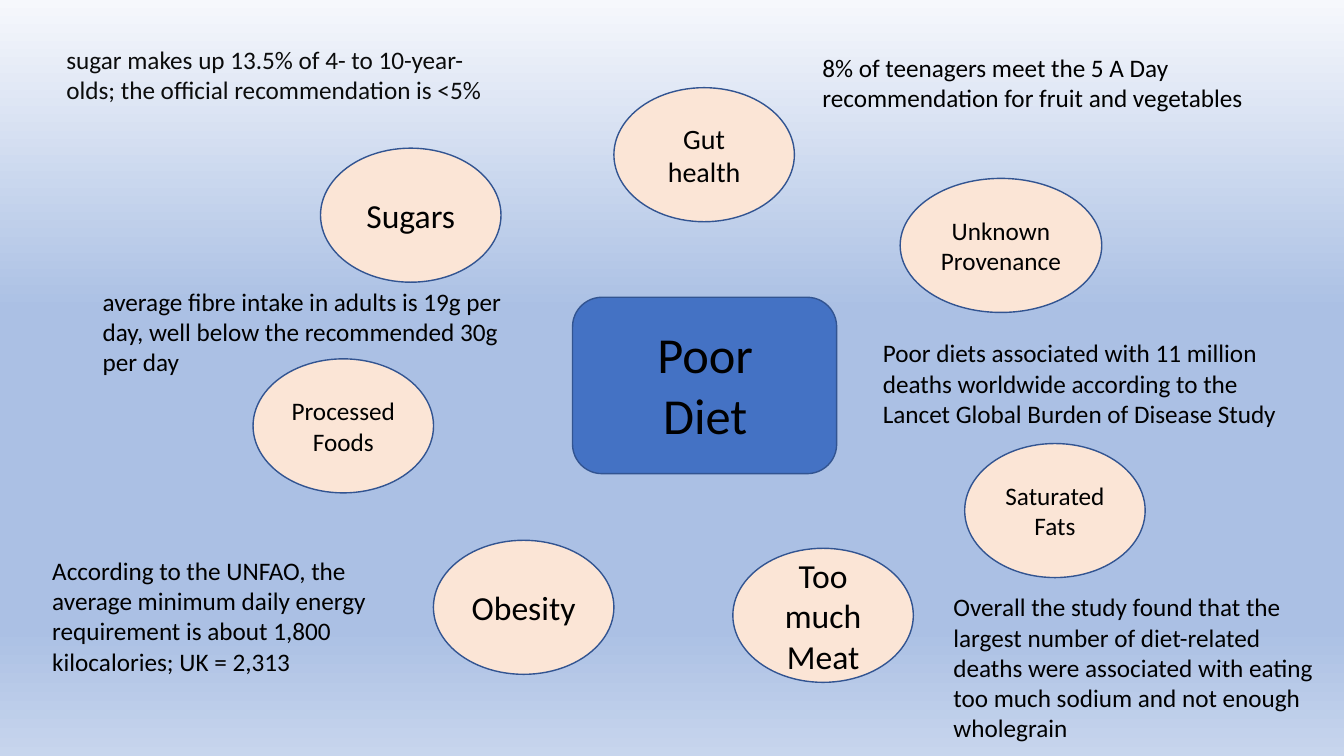
"""Build the poor diet mind map slide."""
from dataclasses import dataclass

from lxml import etree
from pptx import Presentation
from pptx.dml.color import RGBColor
from pptx.enum.shapes import MSO_SHAPE
from pptx.enum.text import MSO_ANCHOR, PP_ALIGN
from pptx.oxml.ns import qn
from pptx.slide import Slide
from pptx.util import Inches, Pt

OVAL = MSO_SHAPE.OVAL
ROUNDED = MSO_SHAPE.ROUNDED_RECTANGLE
MIDDLE = MSO_ANCHOR.MIDDLE
CENTER = PP_ALIGN.CENTER
LEFT = PP_ALIGN.LEFT
WIDTH, HEIGHT = Inches(13.333), Inches(7.5)


@dataclass(frozen=True)
class Theme:
    """Colours and type sizes of the slide."""
    font: str = "Calibri"
    text: str = "000000"
    soft_text: str = "0B0C0C"
    hub: str = "4472C4"
    cause: str = "FBE5D6"
    outline: str = "325491"
    background: tuple = ((0, "F6F8FC"), (41, "ABC0E4"), (83, "ABC0E4"), (100, "C7D5ED"))
    title: int = 36
    title_gap: int = 28
    large: int = 24
    medium: int = 20
    body: int = 18
    line: int = 1


THEME = Theme()


@dataclass(frozen=True)
class Area:
    """Place on the slide, in percent of its width and height."""
    left: float
    top: float
    width: float = 13.43
    height: float = 17.73

    def lengths(self) -> tuple:
        """Return left, top, width and height as slide lengths."""
        return (int(WIDTH * self.left / 100), int(HEIGHT * self.top / 100),
                int(WIDTH * self.width / 100), int(HEIGHT * self.height / 100))


@dataclass(frozen=True)
class Cause:
    """An oval naming one side of a poor diet."""
    label: str
    area: Area
    size: int = THEME.body


@dataclass(frozen=True)
class Fact:
    """A free text note beside the ovals."""
    text: str
    area: Area
    color: str = THEME.text


HUB = Area(42.6, 39.33, 19.65, 23.33)
TITLE = Area(47.03, 42.13, 10.88, 17.47)
TITLE_SPANS = (("Poor", THEME.title), (" ", THEME.title_gap), ("Diet", THEME.title))

CAUSES = (
    Cause("Sugars", Area(23.85, 19.6), THEME.large),
    Cause("Obesity", Area(32.25, 71.47), THEME.large),
    Cause("Processed Foods", Area(18.83, 47.47)),
    Cause("Saturated Fats", Area(71.78, 58.67)),
    Cause("Unknown Provenance", Area(66.98, 23.6, 15)),
    Cause("Gut health", Area(45.68, 11.6), THEME.medium),
    Cause("Too much Meat", Area(54.53, 72.53), THEME.large),
)

FACTS = (
    Fact("8% of teenagers meet the 5 A Day recommendation for fruit and vegetables",
         Area(60.45, 6.27, 34.05, 9.47)),
    Fact("average fibre intake in adults is 19g per day, well below the "
         "recommended 30g per day", Area(6.9, 37.2, 32.03, 13.47)),
    Fact("sugar makes up 13.5% of 4- to 10-year-olds; the official "
         "recommendation is <5%", Area(4.2, 5.2, 33.15, 9.47), THEME.soft_text),
    Fact("According to the UNFAO, the average minimum daily energy requirement "
         "is about 1,800 kilocalories; UK = 2,313", Area(3.15, 72.8, 27.98, 17.47)),
    Fact("Poor diets associated with 11 million deaths worldwide according to the "
         "Lancet Global Burden of Disease Study", Area(64.95, 44, 31.13, 13.47)),
    Fact("Overall the study found that the largest number of diet-related deaths "
         "were associated with eating too much sodium and not enough wholegrain",
         Area(70.2, 77.6, 28.8, 21.6)),
)


def paint_background(page: Slide) -> None:
    """Fill the page with the vertical gradient."""
    fill = page.background.fill
    fill.gradient()
    fill.gradient_angle = 270
    stops = next(page.element.iter(qn("a:gsLst")))
    for stop in list(stops):
        stops.remove(stop)
    for position, color in THEME.background:
        stop = etree.SubElement(stops, qn("a:gs"), pos=str(position * 1000))
        etree.SubElement(stop, qn("a:srgbClr"), val=color)


def style_paragraph(para, size: int, color: str = THEME.text, align=LEFT) -> None:
    """Set the font and alignment of a paragraph."""
    para.alignment = align
    para.font.name = THEME.font
    para.font.size = Pt(size)
    para.font.color.rgb = RGBColor.from_string(color)


def add_figure(page: Slide, kind, area: Area, color: str):
    """Add a flat outlined shape."""
    figure = page.shapes.add_shape(kind, *area.lengths())
    figure.shadow.inherit = False
    figure.fill.solid()
    figure.fill.fore_color.rgb = RGBColor.from_string(color)
    figure.line.color.rgb = RGBColor.from_string(THEME.outline)
    figure.line.width = Pt(THEME.line)
    return figure


def add_box(page: Slide, area: Area):
    """Add a wrapping text box and return its first paragraph."""
    frame = page.shapes.add_textbox(*area.lengths()).text_frame
    frame.word_wrap = True
    return frame.paragraphs[0]


def add_hub(page: Slide) -> None:
    """Add the central panel and its title."""
    add_figure(page, ROUNDED, HUB, THEME.hub)
    para = add_box(page, TITLE)
    style_paragraph(para, THEME.title, align=CENTER)
    for text, size in TITLE_SPANS:
        span = para.add_run()
        span.text = text
        span.font.size = Pt(size)


def add_cause(page: Slide, cause: Cause) -> None:
    """Add one labelled oval."""
    frame = add_figure(page, OVAL, cause.area, THEME.cause).text_frame
    frame.word_wrap = True
    frame.vertical_anchor = MIDDLE
    para = frame.paragraphs[0]
    para.text = cause.label
    style_paragraph(para, cause.size, align=CENTER)


def add_fact(page: Slide, fact: Fact) -> None:
    """Add one note."""
    para = add_box(page, fact.area)
    para.text = fact.text
    style_paragraph(para, THEME.body, fact.color)


def main() -> None:
    """Create and save the deck."""
    deck = Presentation()
    deck.slide_width, deck.slide_height = WIDTH, HEIGHT
    page = deck.slides.add_slide(deck.slide_layouts[6])
    paint_background(page)
    add_hub(page)
    for cause in CAUSES:
        add_cause(page, cause)
    for fact in FACTS:
        add_fact(page, fact)
    deck.save("out.pptx")


if __name__ == "__main__":
    main()
